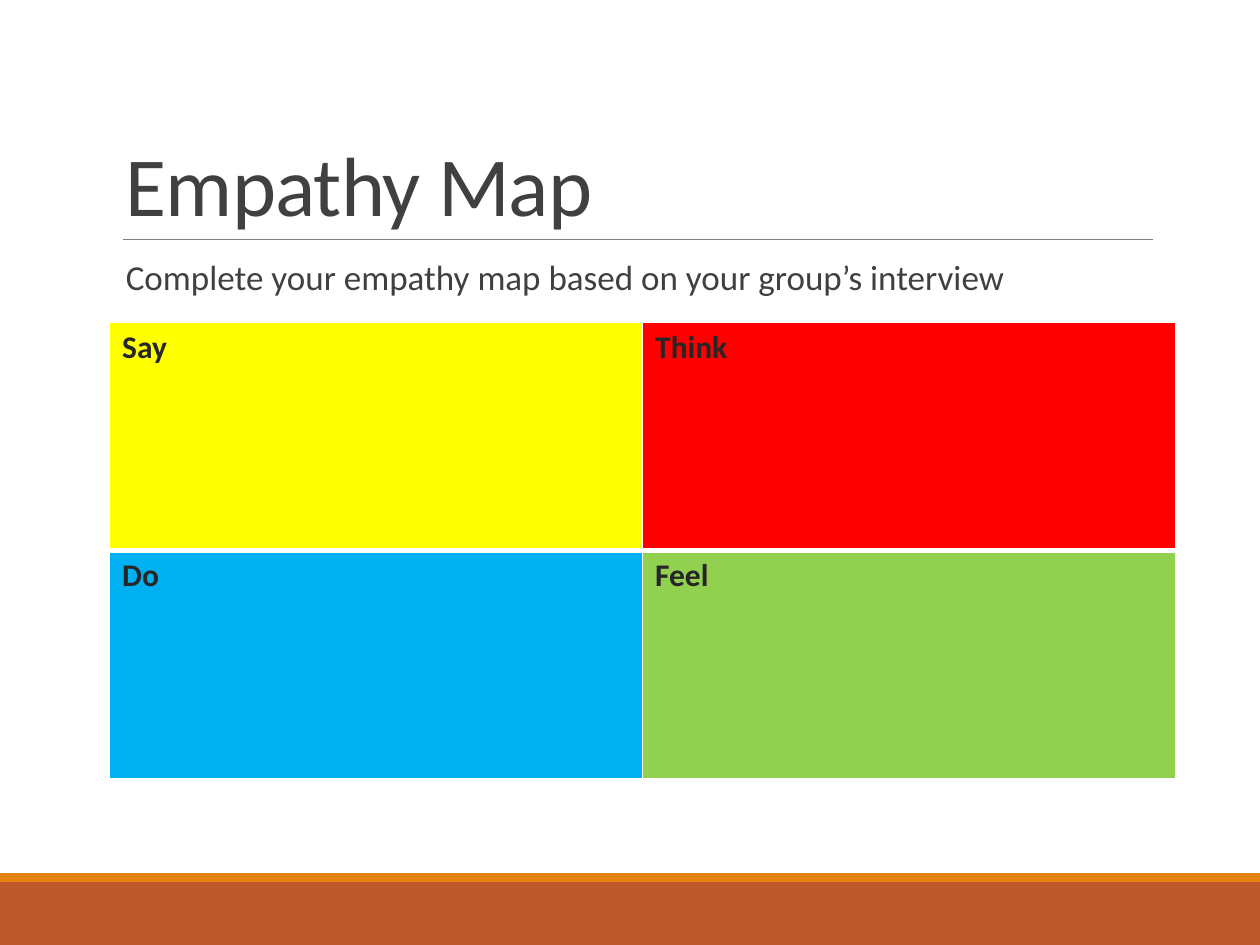
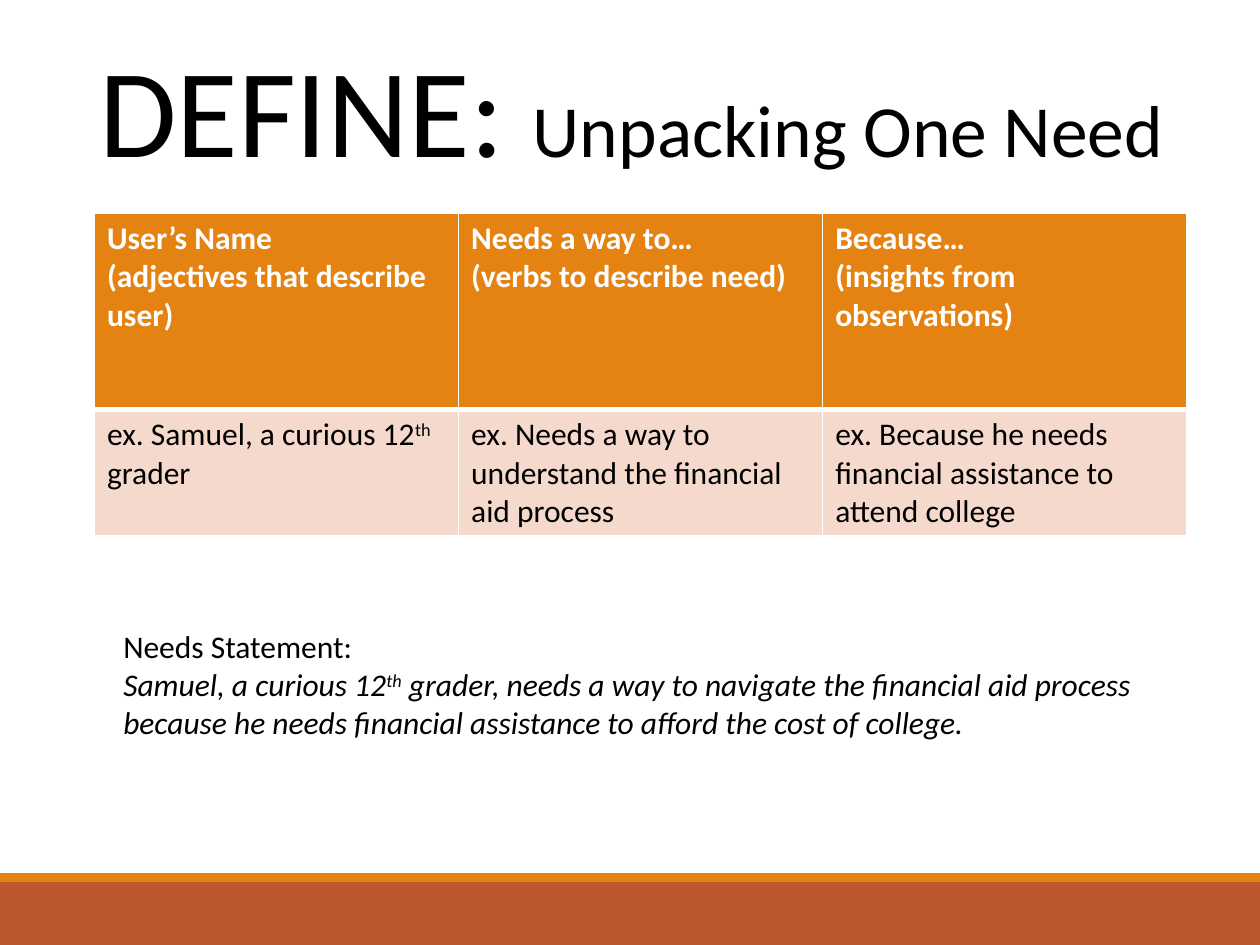
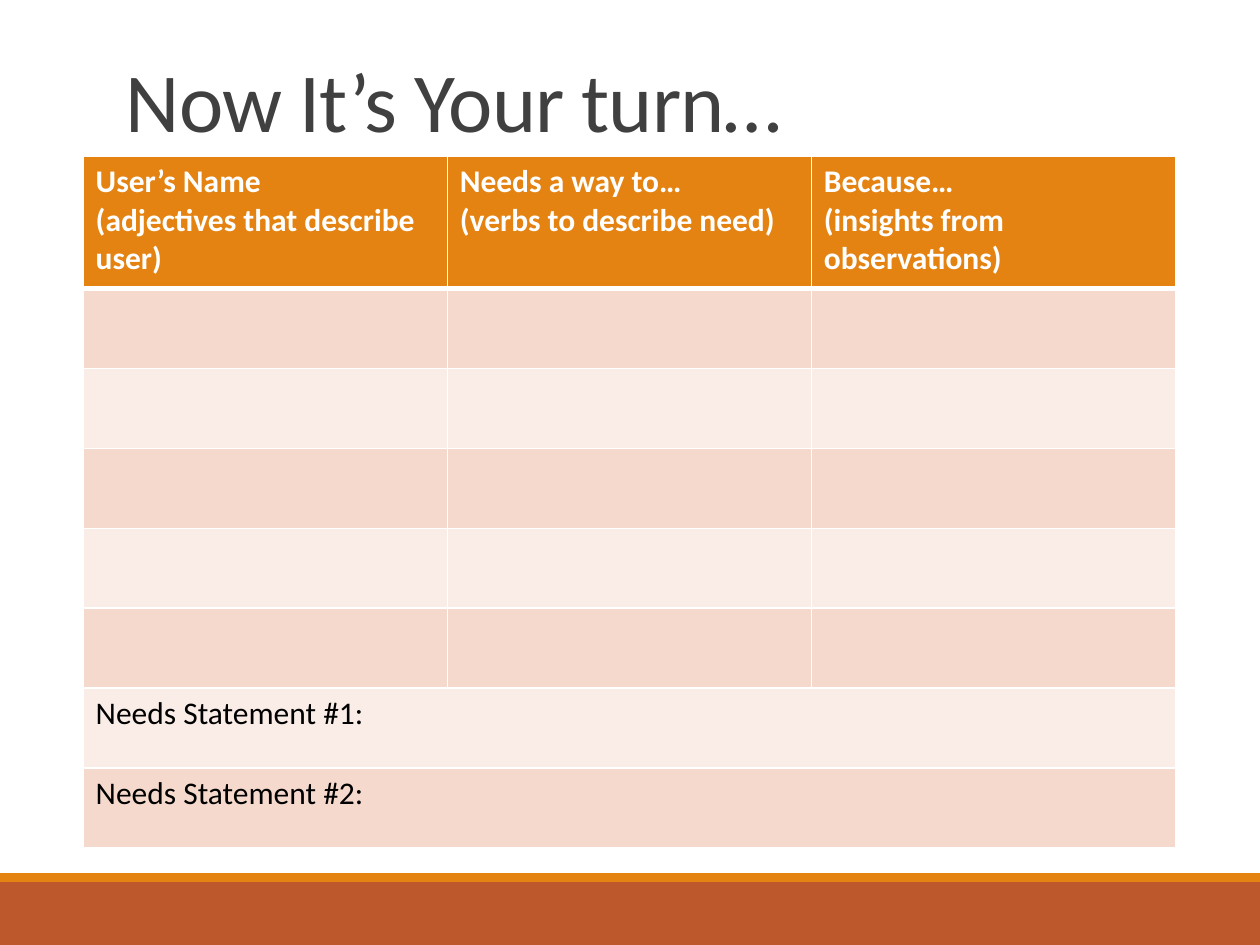
from dataclasses import dataclass, replace
from itertools import cycle, islice

from lxml.etree import SubElement
from pptx import Presentation
from pptx.dml.color import RGBColor
from pptx.enum.shapes import MSO_CONNECTOR as Connector, MSO_SHAPE as Shape
from pptx.enum.text import MSO_ANCHOR as Anchor, PP_ALIGN as Align
from pptx.oxml.ns import qn
from pptx.util import Inches, Pt

WHITE = RGBColor(0xFF, 0xFF, 0xFF)
BLACK = RGBColor(0x00, 0x00, 0x00)
CHARCOAL = RGBColor(0x40, 0x40, 0x40)
INK = RGBColor(0x26, 0x26, 0x26)
GRAY = RGBColor(0x80, 0x80, 0x80)
RUST = RGBColor(0xBD, 0x58, 0x2C)
ORANGE = RGBColor(0xE4, 0x83, 0x12)
PEACH = RGBColor(0xF5, 0xD9, 0xCC)
BLUSH = RGBColor(0xFA, 0xED, 0xE7)
YELLOW = RGBColor(0xFF, 0xFF, 0x00)
RED = RGBColor(0xFF, 0x00, 0x00)
BLUE = RGBColor(0x00, 0xB0, 0xF0)
GREEN = RGBColor(0x92, 0xD0, 0x50)

FONT = "Calibri"
SLIDE_WIDTH, SLIDE_HEIGHT = Inches(10), Inches(7.5)
GRID_COLUMNS, GRID_ROWS = 100, 75


def across(columns):
    return round(SLIDE_WIDTH * columns / GRID_COLUMNS)


def down(rows):
    return round(SLIDE_HEIGHT * rows / GRID_ROWS)


@dataclass(frozen=True)
class Box:
    left: float
    top: float
    width: float
    height: float

    def place(self):
        return across(self.left), down(self.top), across(self.width), down(self.height)


@dataclass(frozen=True)
class Style:
    size: float
    color: RGBColor
    bold: bool = False
    italic: bool = False
    spacing: int = 0
    baseline: int = 0


TITLE = Style(48, CHARCOAL, spacing=-50)
INSTRUCTION = Style(20, CHARCOAL)
BANNER = Style(72, BLACK)
PLAIN = Style(18, BLACK)
HEADING = Style(18, WHITE, bold=True)
QUADRANT = Style(18, INK, bold=True)
EXAMPLE = replace(PLAIN, italic=True)

HEADINGS = [
    ["User’s Name", "(adjectives that describe user)"],
    ["Needs a way to…", "(verbs to describe need)"],
    ["Because…", "(insights from observations)"],
]


def lines(texts, style):
    return [[(text, style)] for text in texts]


def with_ordinal(before, after, style):
    return [(before, style), ("th", replace(style, baseline=30000)), (after, style)]


def write(frame, paragraphs, align=Align.LEFT, line_spacing=None):
    for index, runs in enumerate(paragraphs):
        paragraph = frame.add_paragraph() if index else frame.paragraphs[0]
        paragraph.alignment = align
        if line_spacing:
            paragraph.line_spacing = line_spacing
        for text, style in runs:
            run = paragraph.add_run()
            run.text = text
            font = run.font
            font.name, font.size = FONT, Pt(style.size)
            font.bold, font.italic = style.bold, style.italic
            font.color.rgb = style.color
            properties = run._r.get_or_add_rPr()
            if style.spacing:
                properties.set("spc", str(style.spacing))
            if style.baseline:
                properties.set("baseline", str(style.baseline))


def add_text(slide, box, paragraphs, anchor=Anchor.TOP, **layout):
    frame = slide.shapes.add_textbox(*box.place()).text_frame
    frame.word_wrap = True
    frame.vertical_anchor = anchor
    write(frame, paragraphs, **layout)


def add_title(slide, box, text):
    add_text(slide, box, [[(text, TITLE)]], Anchor.BOTTOM, line_spacing=0.85)


def add_rule(slide, box):
    left, top, width, height = box.place()
    rule = slide.shapes.add_connector(Connector.STRAIGHT, left, top, left + width, top + height)
    rule.line.color.rgb = GRAY
    rule.line.width = Pt(0.5)
    SubElement(rule._element.spPr, qn("a:effectLst"))


def add_footer(slide, box, stripe_height):
    stripe = replace(box, height=stripe_height)
    band = replace(box, top=box.top + stripe_height, height=box.height - stripe_height)
    for part, color in ((band, RUST), (stripe, ORANGE)):
        shape = slide.shapes.add_shape(Shape.RECTANGLE, *part.place())
        shape.shadow.inherit = False
        shape.fill.solid()
        shape.fill.fore_color.rgb = color
        shape.line.fill.background()


def set_borders(cell, top, bottom):
    properties = cell._tc.get_or_add_tcPr()
    for side, width in (("L", 1), ("R", 1), ("T", top), ("B", bottom)):
        line = SubElement(properties, qn(f"a:ln{side}"), w=str(Pt(width)))
        fill = SubElement(line, qn("a:solidFill"))
        SubElement(fill, qn("a:srgbClr"), val=str(WHITE))


def add_grid(slide, box, row_heights, contents, fills):
    column_count = len(fills[0])
    table = slide.shapes.add_table(len(row_heights), column_count, *box.place()).table
    table.first_row = table.horz_banding = False
    for column in table.columns:
        column.width = across(box.width / column_count)
    for row_index, height in enumerate(row_heights):
        table.rows[row_index].height = down(height)
        for column_index in range(column_count):
            cell = table.cell(row_index, column_index)
            set_borders(cell, 3 if row_index == 1 else 1, 3 if row_index == 0 else 1)
            cell.fill.solid()
            cell.fill.fore_color.rgb = fills[row_index][column_index]
        for column_index, paragraphs in enumerate(contents[row_index]):
            write(table.cell(row_index, column_index).text_frame, paragraphs)
    return table


def add_slide(presentation):
    slide = presentation.slides.add_slide(presentation.slide_layouts[6])
    add_footer(slide, Box(0, 69.3, GRID_COLUMNS, 5.7), 0.7)
    return slide


def build_empathy_map(presentation):
    slide = add_slide(presentation)
    add_rule(slide, Box(9.8, 19, 81.7, 0))
    add_title(slide, Box(9, 3.1, 82.5, 15.9), "Empathy Map")
    instruction = "Complete your empathy map based on your group’s interview"
    add_text(slide, Box(9, 20.2, 82.5, 44), [[(instruction, INSTRUCTION)]], line_spacing=0.9)
    quadrants = [["Say", "Think"], ["Do", "Feel"]]
    contents = [[lines([name], QUADRANT) for name in row] for row in quadrants]
    add_grid(slide, Box(8.7, 25.6, 84.6, 36.2), [18.1] * 2, contents,
             [[YELLOW, RED], [BLUE, GREEN]])


def build_need_example(presentation):
    slide = add_slide(presentation)
    add_text(slide, Box(4.3, 2, 91.6, 13.1),
             [[("DEFINE: ", BANNER), ("Unpacking One Need", replace(BANNER, size=42))]],
             align=Align.CENTER)
    examples = [
        [with_ordinal("ex. Samuel, a curious 12", " grader", PLAIN)],
        lines(["ex. Needs a way to understand the financial aid process"], PLAIN),
        lines(["ex. Because he needs financial assistance to attend college"], PLAIN),
    ]
    headings = [lines(heading, HEADING) for heading in HEADINGS]
    add_grid(slide, Box(7.5, 16.9, 86.7, 25.6), [15.6, 10], [headings, examples],
             [[ORANGE] * 3, [PEACH] * 3])
    statement = with_ordinal(
        "Samuel, a curious 12",
        " grader, needs a way to navigate the financial aid process because he needs "
        "financial assistance to afford the cost of college.",
        EXAMPLE)
    add_text(slide, Box(8.8, 49.3, 85.9, 10.1), [[("Needs Statement:", PLAIN)], statement])


def build_need_worksheet(presentation):
    slide = add_slide(presentation)
    add_title(slide, Box(9, -3.5, 82.5, 15.9), "Now It’s Your turn…")
    blank_rows, statement_rows = 5, 2
    body_rows = blank_rows + statement_rows
    header_height, table_height = 10.5, 54.9
    row_height = (table_height - header_height) / body_rows
    statements = [[lines([f"Needs Statement #{number}:"], PLAIN)]
                  for number in range(1, statement_rows + 1)]
    headings = [lines(heading, HEADING) for heading in HEADINGS]
    fills = [[ORANGE] * 3] + [[color] * 3 for color in islice(cycle((PEACH, BLUSH)), body_rows)]
    table = add_grid(slide, Box(6.6, 12.4, 86.7, table_height),
                     [header_height] + [row_height] * body_rows,
                     [headings] + [[]] * blank_rows + statements, fills)
    for row_index in range(blank_rows + 1, body_rows + 1):
        table.cell(row_index, 0).merge(table.cell(row_index, 2))


def main():
    presentation = Presentation()
    presentation.slide_width, presentation.slide_height = SLIDE_WIDTH, SLIDE_HEIGHT
    build_empathy_map(presentation)
    build_need_example(presentation)
    build_need_worksheet(presentation)
    presentation.save("out.pptx")


if __name__ == "__main__":
    main()
